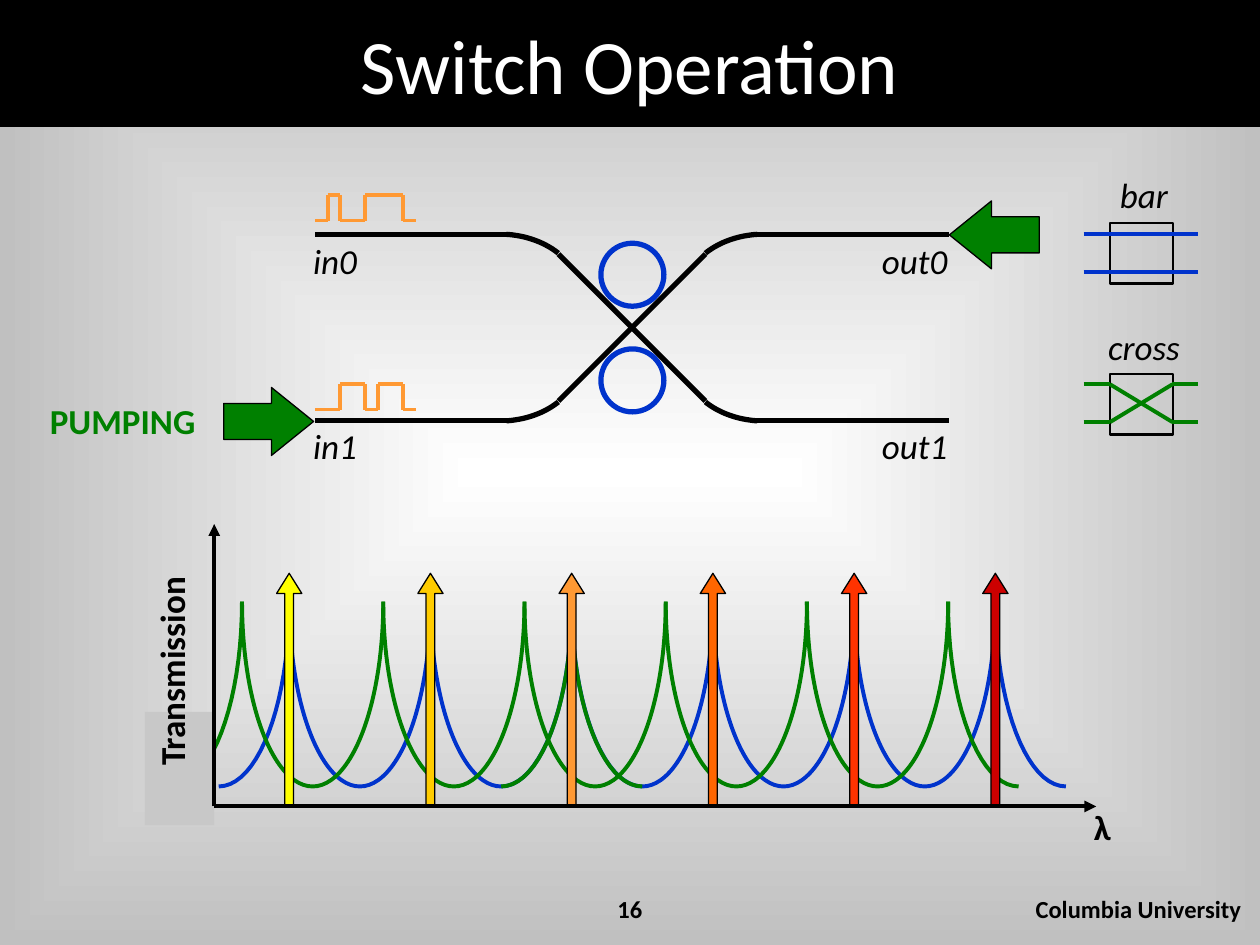
from itertools import groupby, pairwise, product
from typing import NamedTuple

from lxml.etree import SubElement
from pptx import Presentation
from pptx.dml.color import RGBColor
from pptx.enum.shapes import MSO_CONNECTOR, MSO_SHAPE as Kind
from pptx.enum.text import MSO_ANCHOR as Anchor, PP_ALIGN as Align
from pptx.oxml.ns import qn
from pptx.util import Pt

BLACK = RGBColor(0x00, 0x00, 0x00)
WHITE = RGBColor(0xFF, 0xFF, 0xFF)
SILVER = RGBColor(0xC0, 0xC0, 0xC0)
GREY = RGBColor(0xC8, 0xC8, 0xC8)
BLUE = RGBColor(0x00, 0x33, 0xCC)
GREEN = RGBColor(0x00, 0x80, 0x00)
AMBER = RGBColor(0xFF, 0x99, 0x33)
RAYS = [RGBColor(0xFF, 0xFF, 0x00), RGBColor(0xFF, 0xCC, 0x00), AMBER,
        RGBColor(0xFF, 0x66, 0x00), RGBColor(0xFF, 0x33, 0x00),
        RGBColor(0xCC, 0x00, 0x00)]

FONT = "Calibri"
MID_X, MID_Y = 361.1, 187.2          # crossing of the two waveguides
PEAK, PITCH = 165.3, 80.7            # first blue peak and peak spacing
CREST, TROUGH = 343.8, 449.4

Point = tuple[float, float]


class Box(NamedTuple):
    x: float
    y: float
    w: float
    h: float


class Label(NamedTuple):
    text: str
    box: Box
    color: RGBColor = BLACK
    size: float = 20
    bold: bool = False
    italic: bool = False
    align: Align = Align.CENTER
    anchor: Anchor = Anchor.TOP
    turn: float = 0


LABELS = [
    *[Label(f"{name}{row}", Box(x, 133.2 + 105.8 * row, 66.2, 31), italic=True)
      for (name, x), row in product([("in", 158.4), ("out", 489.6)], range(2))],
    Label("PUMPING", Box(-2.2, 224.6, 121, 31), GREEN, bold=True,
          align=Align.RIGHT),
    Label("λ", Box(612, 456.5, 36, 31), bold=True),
    Label("Transmission", Box(29.5, 368, 136.8, 31), bold=True,
          anchor=Anchor.BOTTOM, turn=270),
    Label("bar", Box(620.6, 95.8, 66.2, 31), italic=True),
    Label("cross", Box(620.6, 182.2, 66.2, 31), italic=True),
    Label("Columbia University", Box(547.2, 500.4, 169.2, 37.4), size=14,
          bold=True, align=Align.RIGHT, anchor=Anchor.MIDDLE),
    Label("16", Box(252, 500.4, 216, 37.4), size=14, bold=True,
          anchor=Anchor.MIDDLE),
]

deck = Presentation()
deck.slide_width, deck.slide_height = Pt(720), Pt(540)
slide = deck.slides.add_slide(deck.slide_layouts[5])
shapes = slide.shapes


def paint_back() -> None:
    fill = slide.background.fill
    fill.gradient()
    for stop, color in zip(fill.gradient_stops, (WHITE, SILVER)):
        stop.color.rgb = color
    grad = slide.element.find(".//" + qn("a:gradFill"))
    grad.remove(grad.find(qn("a:lin")))
    way = SubElement(grad, qn("a:path"), {"path": "shape"})
    SubElement(way, qn("a:fillToRect"), dict.fromkeys("ltrb", "50000"))


def style(shape, fill: RGBColor | None, line: RGBColor | None, width: float):
    shape.shadow.inherit = False
    if fill is None:
        shape.fill.background()
    else:
        shape.fill.solid()
        shape.fill.fore_color.rgb = fill
    if line is None:
        shape.line.fill.background()
    else:
        shape.line.color.rgb = line
        shape.line.width = Pt(width)
    return shape


def draw(kind: Kind, box: Box, fill: RGBColor | None = None,
         line: RGBColor | None = BLACK, width: float = 0.75,
         adjust: tuple[float, ...] = ()):
    shape = shapes.add_shape(kind, *map(Pt, box))
    for i, value in enumerate(adjust):
        shape.adjustments[i] = value
    return style(shape, fill, line, width)


def link(start: Point, end: Point, color: RGBColor, width: float = 2.25,
         arrow: bool = False) -> None:
    line = shapes.add_connector(MSO_CONNECTOR.STRAIGHT,
                                *map(Pt, start + end))
    line.line.color.rgb = color
    line.line.width = Pt(width)
    props = line.element.spPr
    if arrow:
        SubElement(props.find(qn("a:ln")), qn("a:tailEnd"), type="triangle")
    SubElement(props, qn("a:effectLst"))


def curve(a: Point, b: Point, c: Point, d: Point, color: RGBColor,
          width: float, steps: int = 20) -> None:
    """Draw a cubic Bezier from a to d as a fine open outline."""
    def spot(t: float) -> Point:
        u = 1 - t
        return tuple(Pt(u**3 * p + 3*u*u*t * q + 3*u*t*t * r + t**3 * s)
                     for p, q, r, s in zip(a, b, c, d))
    first, *rest = [spot(i / steps) for i in range(steps + 1)]
    pen = shapes.build_freeform(*first)
    pen.add_line_segments(rest, close=False)
    style(pen.convert_to_shape(), None, color, width)


def flank(peak: float, side: int, color: RGBColor) -> None:
    """Draw one falling side of a peak: -1 is left, 1 is right."""
    curve((peak + side * 40.3, TROUGH), (peak + side * 18, TROUGH),
          (peak, 402.5), (peak, CREST), color, 2.25)


def comb(peak: float, color: RGBColor) -> None:
    """Draw six resonance peaks joined by upright U shapes."""
    depth = TROUGH - CREST
    for i in range(5):
        mid = peak + PITCH * (i + 0.5)
        box = Box(mid - depth / 2, (CREST + TROUGH - PITCH) / 2, depth, PITCH)
        draw(Kind.LEFT_BRACKET, box, None, color, 2.25, (0.5,)).rotation = 270
    flank(peak, -1, color)
    flank(peak + 5 * PITCH, 1, color)


def guides() -> None:
    for side in (-1, 1):
        link((MID_X - 42, MID_Y + side * 42),
             (MID_X + 42, MID_Y - side * 42), BLACK, 3)
        draw(Kind.OVAL, Box(MID_X - 17.7, MID_Y + side * 30.2 - 18, 36, 36),
             None, BLUE, 3)
    for sx, sy in product((-1, 1), repeat=2):
        def at(dx: float, dy: float) -> Point:
            return MID_X + sx * dx, MID_Y + sy * dy
        curve(at(71.7, 53.3), at(60.9, 52.6), at(50.1, 49), at(42, 42.5),
              BLACK, 3)
        link(at(71, 53.3), at(181, 53.3), BLACK, 3)


def pulse(bits: str, base: float) -> None:
    x, spots = 180, []
    for bit, run in groupby(bits):
        y = base - 14.4 * int(bit)
        end = x + 7.2 * len(list(run))
        spots += [(x, y), (end, y)]
        x = end
    for a, b in pairwise(spots):
        link(a, b, AMBER)


def states() -> None:
    left, near, far, right = 619.2, 634.3, 670, 684.7
    for y in (127.4, 213.8):
        draw(Kind.RECTANGLE, Box(near, y, 36, 34.6), width=1.5)
    for y in (133.9, 155.5):
        link((left, y), (right, y), BLUE)
    high, low = 219.6, 241.2
    for a, b in ((high, low), (low, high)):
        for p, q in pairwise([(left, a), (near, a), (far, b), (right, b)]):
            link(p, q, GREEN)


def write(label: Label) -> None:
    box = shapes.add_textbox(*map(Pt, label.box))
    box.rotation = label.turn
    frame = box.text_frame
    frame.word_wrap = True
    frame.vertical_anchor = label.anchor
    para = frame.paragraphs[0]
    para.text, para.alignment = label.text, label.align
    font = para.font
    font.name, font.size = FONT, Pt(label.size)
    font.bold, font.italic = label.bold, label.italic
    font.color.rgb = label.color


def head() -> None:
    bar = draw(Kind.RECTANGLE, Box(0, 0, 720, 72), BLACK)
    title = shapes.title
    title.element.addprevious(bar.element)
    title.left, title.top, title.width, title.height = map(
        Pt, (12, 6.5, 696, 60))
    title.text_frame.text = "Switch Operation"
    title.text_frame.vertical_anchor = Anchor.MIDDLE
    para = title.text_frame.paragraphs[0]
    para.alignment = Align.CENTER
    para.font.name, para.font.size = FONT, Pt(44)
    para.font.color.rgb = WHITE


paint_back()
head()
comb(PEAK, BLUE)
guides()
pulse("01001110", 126)
pulse("00110110", 234)
for side in (-1, 1):
    flank(PEAK + 2 * PITCH, side, GREEN)
for kind, x, y in ((Kind.LEFT_ARROW, 542.5, 114.8),
                   (Kind.RIGHT_ARROW, 127.8, 221.4)):
    draw(kind, Box(x, y, 51.4, 38.9), GREEN, adjust=(0.53, 0.62))
comb(PEAK - 27, GREEN)
for i, ray in enumerate(RAYS):
    draw(Kind.UP_ARROW, Box(PEAK + i * PITCH - 7.2, 327.6, 14.4, 133.2), ray,
         adjust=(0.35, 0.8))
draw(Kind.RECTANGLE, Box(82.8, 406.8, 39.6, 64.8), GREY, None)
for tip in ((122.4, 299.5), (626.4, 460.8)):
    link((122.4, 460.8), tip, BLACK, arrow=True)
states()
for label in LABELS:
    write(label)
deck.save("out.pptx")
